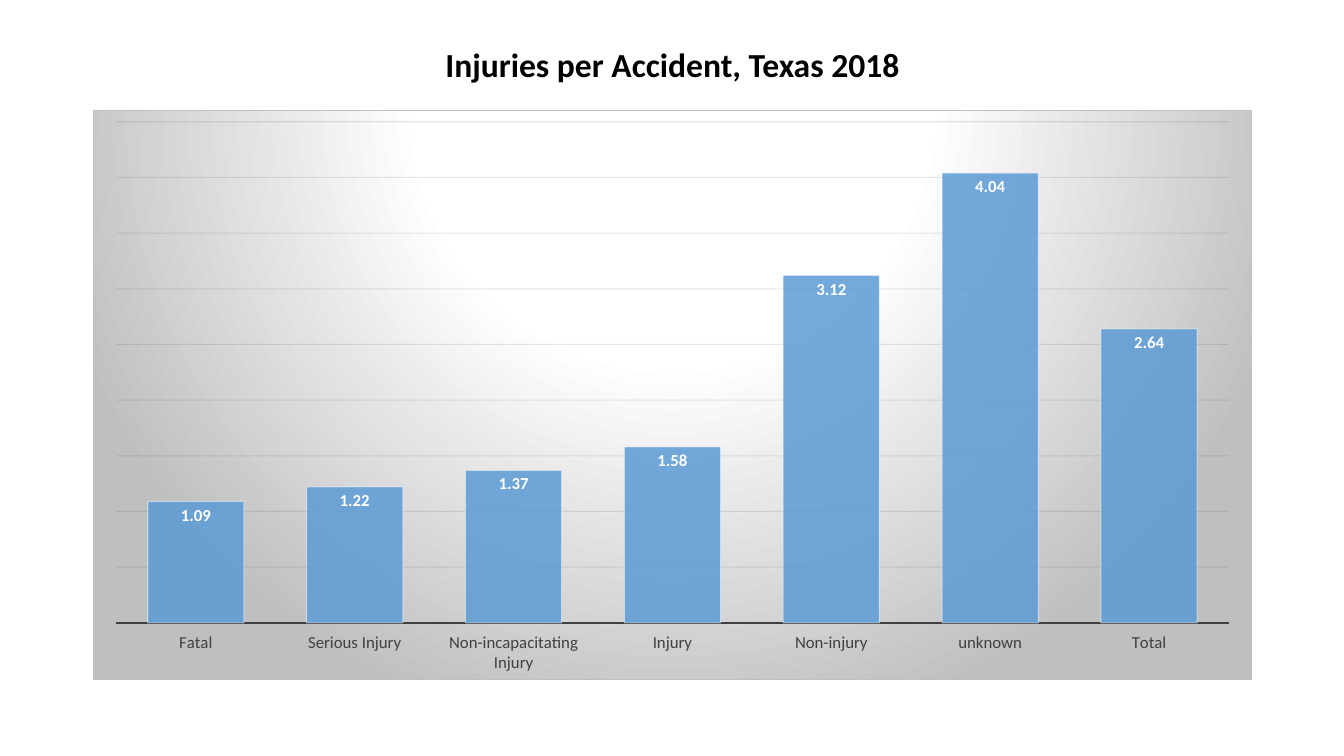
from lxml import etree
from pptx import Presentation
from pptx.chart.data import CategoryChartData
from pptx.dml.color import RGBColor
from pptx.enum.chart import XL_CHART_TYPE, XL_LABEL_POSITION, XL_TICK_LABEL_POSITION, XL_TICK_MARK
from pptx.enum.text import MSO_ANCHOR, MSO_AUTO_SIZE, PP_ALIGN
from pptx.oxml import parse_xml
from pptx.oxml.ns import nsdecls, qn
from pptx.util import Inches, Pt

COLUMNS = XL_CHART_TYPE.COLUMN_CLUSTERED
INSIDE_END = XL_LABEL_POSITION.INSIDE_END
LABELS_LOW = XL_TICK_LABEL_POSITION.LOW
NO_TICK = XL_TICK_MARK.NONE
MIDDLE = MSO_ANCHOR.MIDDLE
NO_FIT = MSO_AUTO_SIZE.NONE
CENTER = PP_ALIGN.CENTER

FONT = "Calibri"
COLORS = {"text": "000000", "axis": "404040", "grid": "0D0D0D",
          "bar": "5B9BD5", "white": "FFFFFF", "gray": "BFBFBF"}
INJURIES = {"Fatal": 1.09, "Serious Injury": 1.22, "Non-incapacitating Injury": 1.37,
            "Injury": 1.58, "Non-injury": 3.12, "unknown": 4.04, "Total": 2.64}


def style_font(font, size, color, bold=False):
    font.name, font.size, font.bold = FONT, Pt(size), bold
    font.color.rgb = RGBColor.from_string(COLORS[color])


def paint(fill, color, opacity):
    fill.solid()
    fill.fore_color.rgb = RGBColor.from_string(COLORS[color])
    for clr in fill._xPr.iter(qn("a:srgbClr")):
        etree.SubElement(clr, qn("a:alpha")).set("val", str(opacity * 1000))


prs = Presentation()
prs.slide_width, prs.slide_height = Inches(13.33), Inches(7.5)
s = prs.slides.add_slide(prs.slide_layouts[5])
left, width = Inches(0.92), Inches(11.5)

# Title
title = s.shapes.title
title.left, title.top, title.width, title.height = left, Inches(0.4), width, Inches(0.52)
tf = title.text_frame
tf.auto_size = NO_FIT
tf.vertical_anchor = MIDDLE
p = tf.paragraphs[0]
p.alignment, p.line_spacing = CENTER, 0.9
r = p.add_run()
r.text = "Injuries per Accident, Texas 2018"
style_font(r.font, 24, "text", True)

# Chart
data = CategoryChartData(number_format="0.00")
data.categories = list(INJURIES)
data.add_series("Series 1", list(INJURIES.values()))
chart = s.shapes.add_chart(COLUMNS, left, Inches(1.09), width, Inches(5.66), data).chart
chart.has_title = chart.has_legend = False
style_font(chart.font, 10, "text")

# Axes and gridlines
cat = chart.category_axis
cat.major_tick_mark = cat.minor_tick_mark = NO_TICK
cat.tick_label_position = LABELS_LOW
style_font(cat.tick_labels.font, 12, "axis")
cat.format.line.width = Pt(1.5)
paint(cat.format.line.fill, "axis", 100)
val = chart.value_axis
val.visible = False
val.minimum_scale, val.maximum_scale, val.major_unit = 0, 4.5, 0.5
val.tick_labels.number_format = "0.00"
val.tick_labels.number_format_is_linked = False
grid = val.major_gridlines.format.line
grid.width = Pt(0.75)
paint(grid.fill, "grid", 10)

# Bars and their labels
plot = chart.plots[0]
plot.gap_width = 65
plot.vary_by_categories = False
bars = plot.series[0]
bars.invert_if_negative = False
paint(bars.format.fill, "bar", 85)
bars.format.line.width = Pt(0.75)
paint(bars.format.line.fill, "white", 50)
labels = bars.data_labels
labels.show_value = True
labels.position = INSIDE_END
labels.number_format, labels.number_format_is_linked = "0.00", False
style_font(labels.font, 12, "white", True)

# Plot area as shares of the chart
plot_area = chart._chartSpace.chart.plotArea
for old in plot_area.findall(qn("c:layout")):
    plot_area.remove(old)
plot_area.insert(0, parse_xml(
    f'<c:layout {nsdecls("c")}><c:manualLayout><c:layoutTarget val="inner"/>'
    '<c:xMode val="edge"/><c:yMode val="edge"/><c:x val="0.02"/><c:y val="0.02"/>'
    '<c:w val="0.96"/><c:h val="0.88"/></c:manualLayout></c:layout>'))

# Radial background and border
stops = "".join(f'<a:gs pos="{pos * 1000}"><a:srgbClr val="{COLORS[c]}"/></a:gs>'
                for pos, c in ((0, "white"), (39, "white"), (100, "gray")))
chart._chartSpace.chart.addnext(parse_xml(
    f'<c:spPr {nsdecls("c", "a")}><a:gradFill><a:gsLst>{stops}</a:gsLst>'
    '<a:path path="circle"><a:fillToRect l="50000" t="-80000" r="50000" b="180000"/></a:path>'
    f'</a:gradFill><a:ln w="{Pt(0.75)}"><a:solidFill><a:srgbClr val="{COLORS["gray"]}"/>'
    '</a:solidFill></a:ln></c:spPr>'))

prs.save("out.pptx")
